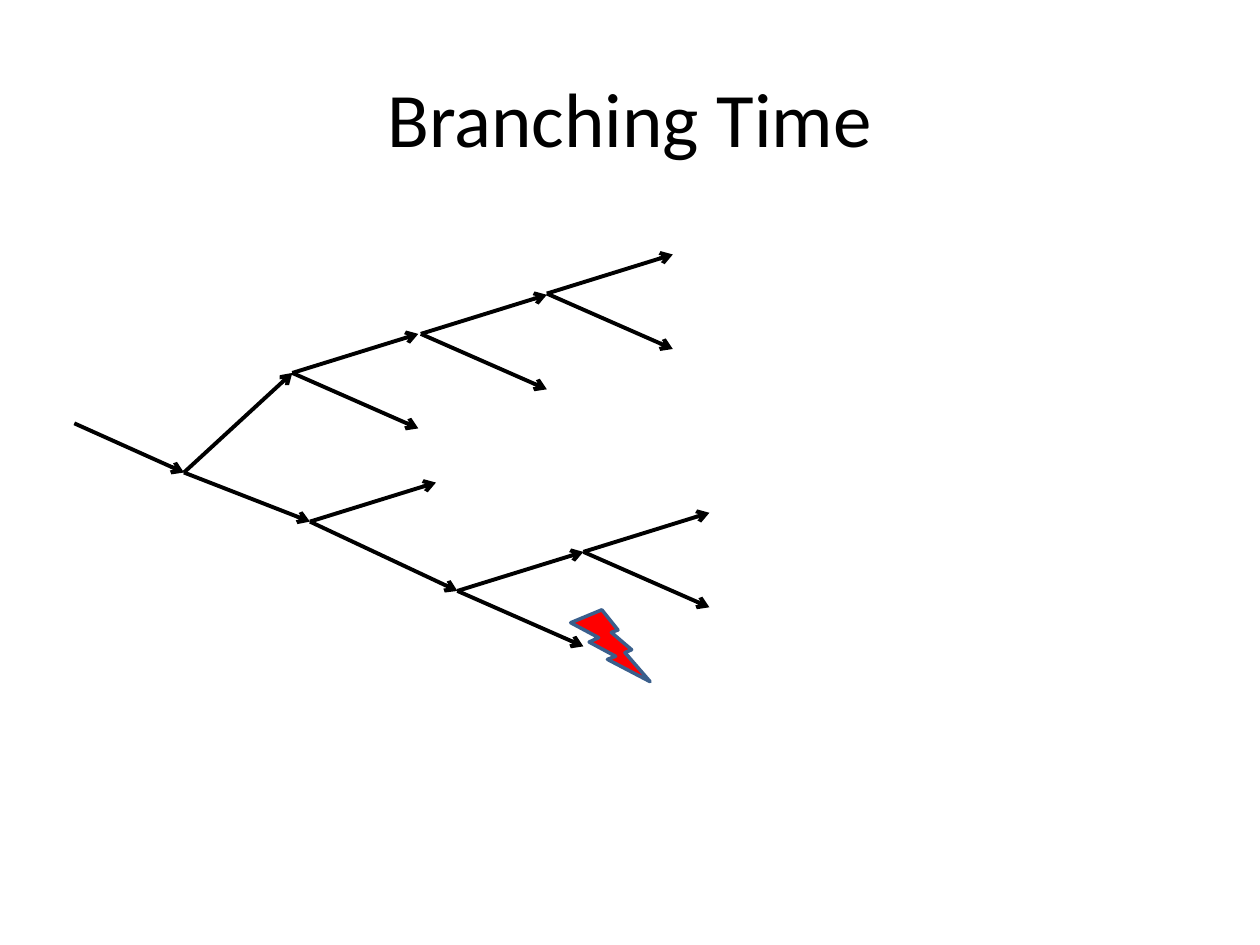
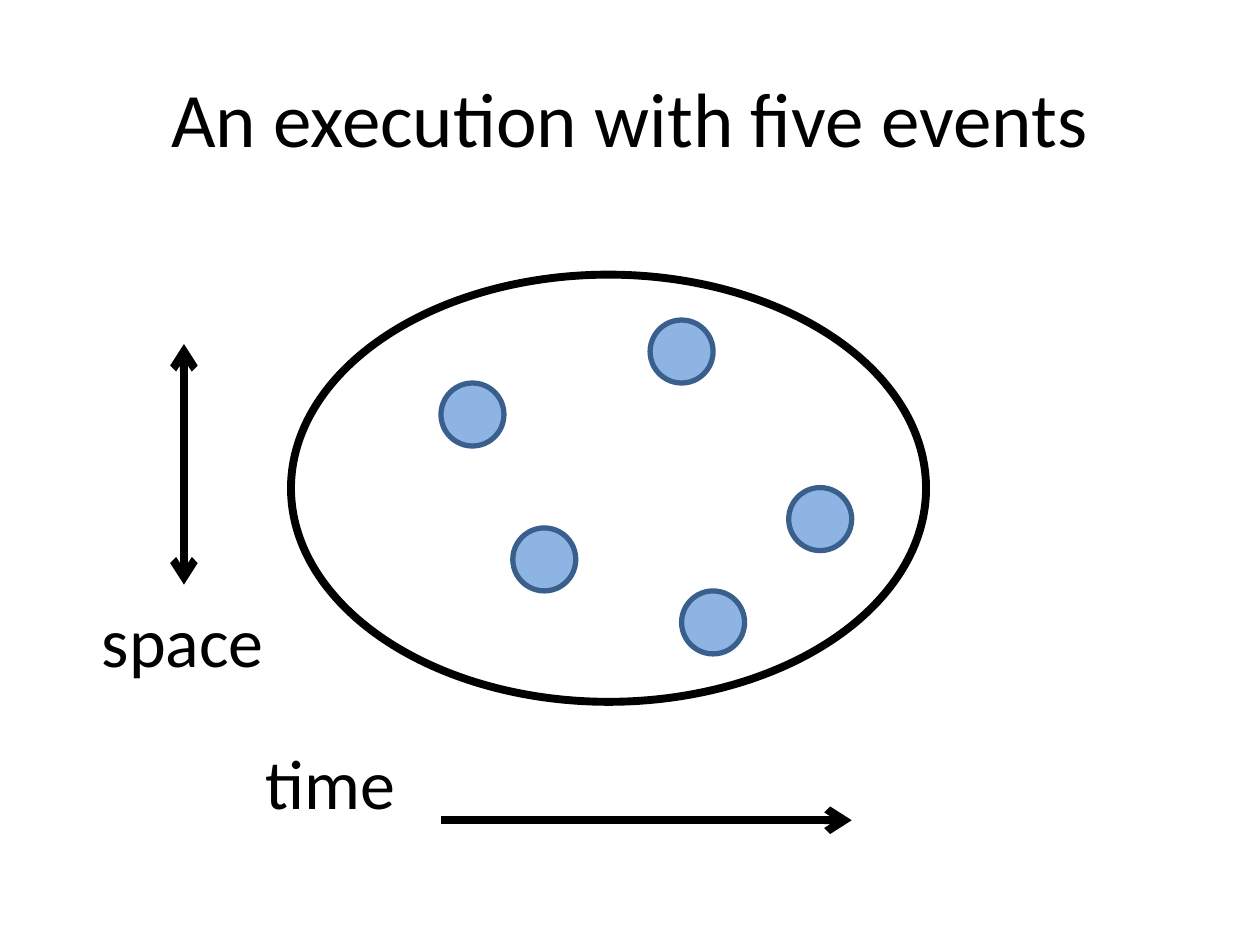
"""Build two slides: a branching time tree and an execution with events."""
import pptx
import pptx.dml.color
import pptx.enum.shapes
import pptx.enum.text
import pptx.oxml
import pptx.oxml.ns
import pptx.util

Inches = pptx.util.Inches
RGBColor = pptx.dml.color.RGBColor
Kind = pptx.enum.shapes.MSO_SHAPE
Align = pptx.enum.text.PP_ALIGN

BLACK = RGBColor(0x00, 0x00, 0x00)
RED = RGBColor(0xFF, 0x00, 0x00)
SKY = RGBColor(0x8E, 0xB4, 0xE3)
NAVY = RGBColor(0x3A, 0x5F, 0x8C)
FONT = "Calibri"

ROOT = (0.59, 3.36)
START = (1.46, 3.75)
HIGH = (2.32, 2.96)
LOW = (2.46, 4.14)
DEEP = (3.63, 4.69)
FORKS = [HIGH, (3.34, 2.65), (4.34, 2.33), DEEP, (4.63, 4.38)]
RISE, FALL = -0.31, 0.44

DOT = 0.5
EVENTS = [(3.5, 3.04), (5.16, 2.54), (5.41, 4.69), (4.07, 4.19), (6.26, 3.87)]


def put_text(frame, text, size=40, color=BLACK, align=Align.LEFT):
    """Write one formatted line into a text frame."""
    line = frame.paragraphs[0]
    line.alignment = align
    run = line.add_run()
    run.text = text
    run.font.name = FONT
    run.font.size = pptx.util.Pt(size)
    run.font.color.rgb = color


def new_slide(deck, text):
    """Add a slide that has only a centred title."""
    slide = deck.slides.add_slide(deck.slide_layouts[5])
    title = slide.shapes.title
    title.left, title.top = Inches(0.5), Inches(0.3)
    title.width, title.height = Inches(9), Inches(1.25)
    title.text_frame.vertical_anchor = pptx.enum.text.MSO_ANCHOR.MIDDLE
    put_text(title.text_frame, text, size=44, align=Align.CENTER)
    return slide


def add_label(slide, text, left, top, width):
    """Add a large one-line label."""
    box = slide.shapes.add_textbox(
        Inches(left), Inches(top), Inches(width), Inches(0.77))
    box.text_frame.word_wrap = False
    box.text_frame.auto_size = pptx.enum.text.MSO_AUTO_SIZE.SHAPE_TO_FIT_TEXT
    put_text(box.text_frame, text)


def add_arrow(slide, start, end, weight=2.25, ends=("tailEnd",)):
    """Draw a black line with open arrowheads at the named ends."""
    arrow = slide.shapes.add_connector(
        pptx.enum.shapes.MSO_CONNECTOR.STRAIGHT,
        *(Inches(value) for value in start + end))
    arrow.line.color.rgb = BLACK
    arrow.line.width = pptx.util.Pt(weight)
    props = arrow.element.spPr
    line = props.find(pptx.oxml.ns.qn("a:ln"))
    for name in ends:
        tip = pptx.oxml.parse_xml(
            f'<a:{name} {pptx.oxml.ns.nsdecls("a")} type="arrow"/>')
        line.append(tip)
    props.append(pptx.oxml.parse_xml(
        f'<a:effectLst {pptx.oxml.ns.nsdecls("a")}/>'))


def add_form(slide, kind, left, top, width, height, fill, color, weight):
    """Draw a preset shape; a fill of None leaves it hollow."""
    form = slide.shapes.add_shape(
        kind, Inches(left), Inches(top), Inches(width), Inches(height))
    form.shadow.inherit = False
    if fill is None:
        form.fill.background()
    else:
        form.fill.solid()
        form.fill.fore_color.rgb = fill
    form.line.color.rgb = color
    form.line.width = pptx.util.Pt(weight)


def draw_tree(deck):
    """Build the slide with the branching time tree."""
    slide = new_slide(deck, "Branching Time")
    links = [(ROOT, START), (START, HIGH), (START, LOW), (LOW, DEEP),
             (LOW, (LOW[0] + 1, LOW[1] + RISE))]
    links += [((x, y), (x + 1, y + step))
              for x, y in FORKS for step in (FALL, RISE)]
    for start, end in links:
        add_arrow(slide, start, end)
    add_form(slide, Kind.LIGHTNING_BOLT, 4.53, 4.84, 0.63, 0.57, RED, NAVY, 2)


def draw_events(deck):
    """Build the slide with five events in space and time."""
    slide = new_slide(deck, "An execution with five events")
    add_form(slide, Kind.OVAL, 2.31, 2.18, 5.04, 3.39, None, BLACK, 4.5)
    for left, top in EVENTS:
        add_form(slide, Kind.OVAL, left, top, DOT, DOT, SKY, NAVY, 3)
    add_arrow(slide, (3.5, 6.51), (6.76, 6.51), weight=4.5)
    add_label(slide, "time", 2.01, 5.82, 1.25)
    add_arrow(slide, (1.46, 2.73), (1.46, 4.64), weight=4.5,
              ends=("headEnd", "tailEnd"))
    add_label(slide, "space", 0.71, 4.69, 1.5)


def main():
    """Build and save the deck."""
    deck = pptx.Presentation()
    deck.slide_width, deck.slide_height = Inches(10), Inches(7.5)
    draw_tree(deck)
    draw_events(deck)
    deck.save("out.pptx")


if __name__ == "__main__":
    main()
